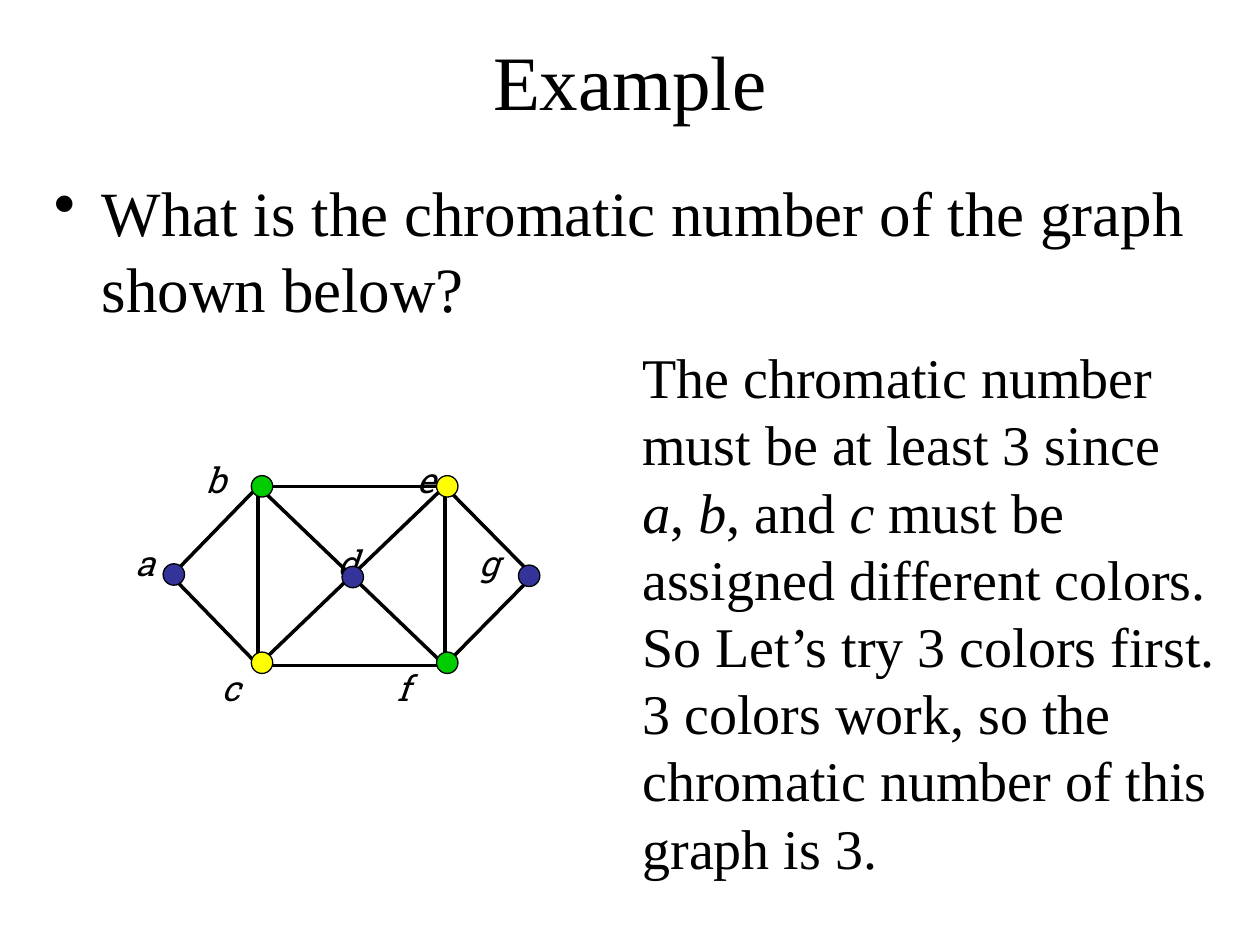
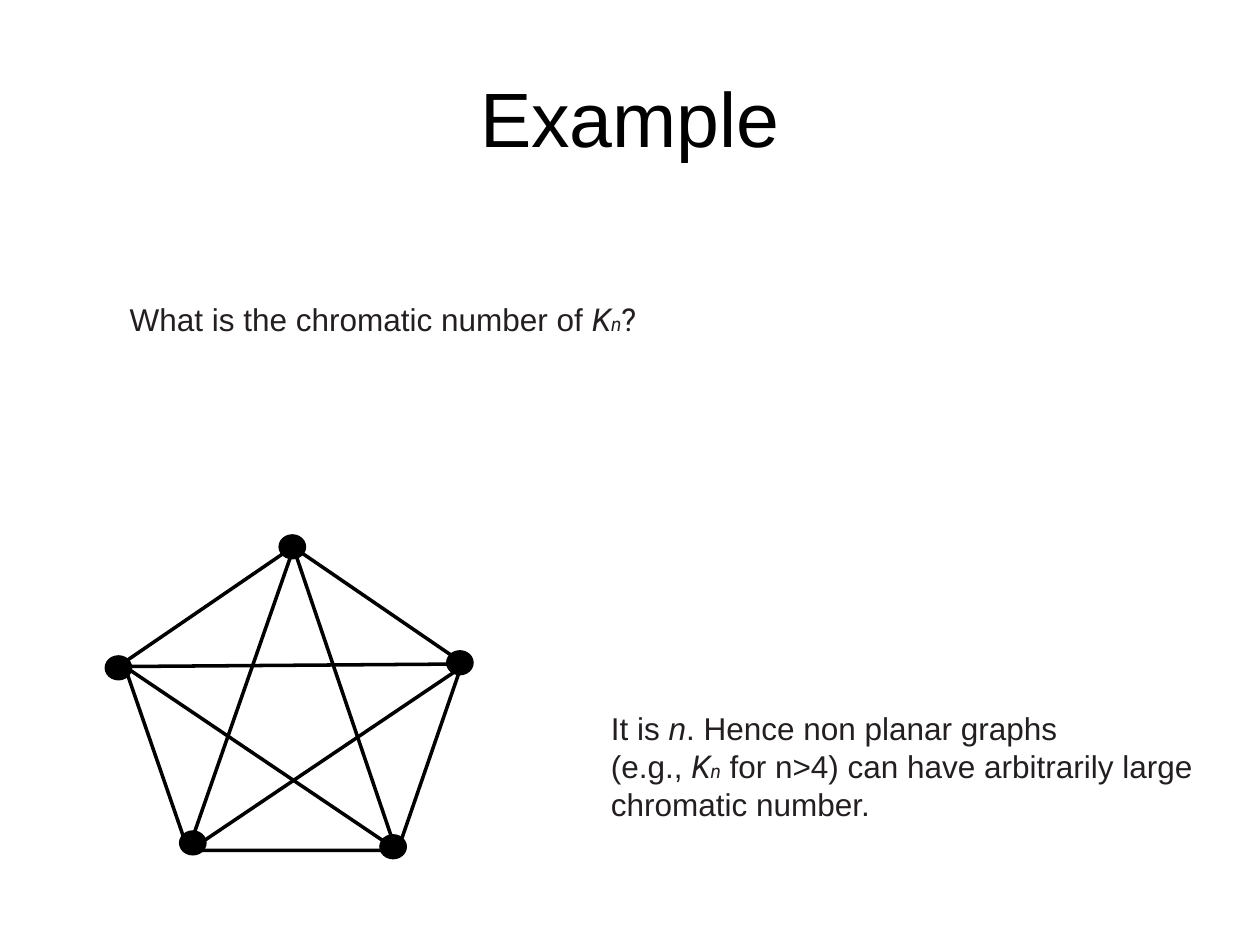
from itertools import combinations

from lxml import etree
from pptx import Presentation
from pptx import util as u
from pptx.dml.color import RGBColor
from pptx.enum import shapes, text
from pptx.oxml.ns import qn

COLORS = {
    "black": "000000", "ink": "231F20",
    "blue": "333399", "green": "00CC00", "yellow": "FFFF00",
}
SERIF, SANS, MATH, LABEL = "Times New Roman", "Arial", "Roboto", "Roboto Slab"

STYLES = {
    "serif title": dict(name=SERIF, size=44, color="black"),
    "sans title": dict(name=SANS, size=44, color="black"),
    "question": dict(name=SERIF, size=36, color="black"),
    "answer": dict(name=SERIF, size=32, color="black"),
    "answer vertex": dict(name=SERIF, size=32, color="black", italic=True),
    "label": dict(name=LABEL, size=20, color="black", italic=True),
    "plain": dict(name=SANS, size=18, color="ink"),
    "variable": dict(name=SANS, size=18, color="ink", italic=True),
    "symbol": dict(name=MATH, size=18, color="ink", italic=True),
    "index": dict(name=MATH, size=11, color="ink", italic=True),
    "mark": dict(name=MATH, size=18, color="ink"),
}

# Each text is a list of lines, each line a list of (words, style).
QUESTION = [[("What is the chromatic number of the graph shown below?", "question")]]
ANSWER = [[
    ("The chromatic number must be at least 3 since ", "answer"),
    ("a", "answer vertex"), (", ", "answer"),
    ("b", "answer vertex"), (", and ", "answer"),
    ("c", "answer vertex"),
    (" must be assigned different colors. So Let’s try 3 colors first. "
     "3 colors work, so the chromatic number of this graph is 3.", "answer"),
]]
KN = [("K", "symbol"), ("n", "index")]
KN_QUESTION = [[("What is the chromatic number of ", "plain"), *KN, ("?", "mark")]]
KN_ANSWER = [
    [("It is ", "plain"), ("n", "variable"), (". Hence non planar graphs", "plain")],
    [("(e.g., ", "plain"), *KN, (" for n>4) can have arbitrarily large", "plain")],
    [("chromatic number.", "plain")],
]

# Colored graph: where edges meet, where the dot sits, its color,
# and the label's centre and text row.
VERTICES = {
    "a": ((1.36, 4.57), (1.38, 4.56), "blue", 1.15, 2),
    "b": ((2.05, 3.86), (2.08, 3.86), "green", 1.71, 0),
    "c": ((2.05, 5.28), (2.08, 5.26), "yellow", 1.83, 5),
    "d": ((2.79, 4.57), (2.8, 4.58), "blue", 2.76, 2),
    "e": ((3.53, 3.86), (3.55, 3.86), "yellow", 3.38, 0),
    "f": ((3.53, 5.28), (3.55, 5.26), "green", 3.2, 5),
    "g": ((4.23, 4.57), (4.2, 4.57), "blue", 3.88, 2),
}
EDGES = ["be", "bc", "cf", "ef", "bd", "df", "cd", "de", "ab", "ac", "eg", "fg"]
LABEL_TOP, LABEL_PITCH, LABEL_SIZE = 3.64, 0.33, (0.3, 0.38)

PENTAGON = (0.98, 4.34, 2.69, 2.41)
K5_DOTS = [(2.32, 4.34), (3.65, 5.26), (3.12, 6.72), (1.53, 6.69), (0.94, 5.3)]
K5_CHORD_ENDS = [(2.33, 4.35), (3.7, 5.27), (3.14, 6.74), (1.49, 6.76), (0.99, 5.29)]


def rgb(color):
    return RGBColor.from_string(COLORS[color])


def place(shape, box):
    for side, length in zip(("left", "top", "width", "height"), box):
        setattr(shape, side, u.Inches(length))


def write(frame, lines, align=text.PP_ALIGN.LEFT):
    paragraph = frame.paragraphs[0]
    paragraph.alignment = align
    for number, line in enumerate(lines):
        if number:
            paragraph.add_line_break()
        for words, style in line:
            run = paragraph.add_run()
            run.text = words
            look = dict(STYLES[style])
            run.font.color.rgb = rgb(look.pop("color"))
            look["size"] = u.Pt(look["size"])
            for key, value in look.items():
                setattr(run.font, key, value)
    return paragraph


def add_text(slide, box, lines, align=text.PP_ALIGN.LEFT, wrap=True, inset=None):
    frame = slide.shapes.add_textbox(*map(u.Inches, box)).text_frame
    frame.word_wrap = wrap
    if inset is not None:
        for side in ("left", "top", "right", "bottom"):
            setattr(frame, "margin_" + side, u.Inches(inset))
    return write(frame, lines, align)


def add_bullet(paragraph, indent):
    props = paragraph._p.get_or_add_pPr()
    props.set("marL", str(u.Inches(indent)))
    props.set("indent", str(-u.Inches(indent)))
    before = etree.SubElement(props, qn("a:spcBef"))
    etree.SubElement(before, qn("a:spcPct")).set("val", "20000")
    etree.SubElement(props, qn("a:buChar")).set("char", "•")


def add_edge(slide, start, end):
    edge = slide.shapes.add_connector(
        shapes.MSO_CONNECTOR.STRAIGHT, *map(u.Inches, (*start, *end)))
    edge.line.color.rgb = rgb("black")
    edge.line.width = u.Pt(2)
    etree.SubElement(edge._element.spPr, qn("a:effectLst"))


def add_outlined(slide, kind, box, fill, weight):
    shape = slide.shapes.add_shape(kind, *map(u.Inches, box))
    shape.shadow.inherit = False
    if fill:
        shape.fill.solid()
        shape.fill.fore_color.rgb = rgb(fill)
    else:
        shape.fill.background()
    shape.line.color.rgb = rgb("black")
    shape.line.width = u.Pt(weight)


def add_dot(slide, center, size, fill):
    (x, y), (width, height) = center, size
    box = (x - width / 2, y - height / 2, width, height)
    add_outlined(slide, shapes.MSO_SHAPE.OVAL, box, fill, 0.75)


def add_example(prs, box, style):
    """Add a title-only slide headed Example."""
    slide = prs.slides.add_slide(prs.slide_layouts[5])
    title = slide.shapes.title
    place(title, box)
    title.text_frame.vertical_anchor = text.MSO_ANCHOR.MIDDLE
    write(title.text_frame, [[("Example", style)]], text.PP_ALIGN.CENTER)
    return slide


def build_colored_graph(prs):
    slide = add_example(prs, (0.5, 0.17, 9, 0.92), "serif title")
    add_text(slide, (5, 2.67, 4.75, 4.36), ANSWER)
    add_bullet(add_text(slide, (0.33, 1.33, 9.25, 1.67), QUESTION), 0.38)
    for start, end in EDGES:
        add_edge(slide, VERTICES[start][0], VERTICES[end][0])
    for name, (_, _, _, center, row) in VERTICES.items():
        box = (center - LABEL_SIZE[0] / 2, LABEL_TOP + row * LABEL_PITCH, *LABEL_SIZE)
        add_text(slide, box, [[(name, "label")]], text.PP_ALIGN.CENTER, inset=0)
    for _, center, color, _, _ in VERTICES.values():
        add_dot(slide, center, (0.17, 0.17), color)


def build_complete_graph(prs):
    slide = add_example(prs, (0.5, 0.3, 9, 1.25), "sans title")
    add_text(slide, (0.54, 2.33, 5, 0.71), KN_QUESTION, text.PP_ALIGN.CENTER)
    add_outlined(slide, shapes.MSO_SHAPE.REGULAR_PENTAGON, PENTAGON, None, 2)
    for first, second in combinations(range(5), 2):
        if second - first in (2, 3):
            add_edge(slide, K5_CHORD_ENDS[first], K5_CHORD_ENDS[second])
    for center in K5_DOTS:
        add_dot(slide, center, (0.21, 0.19), "black")
    add_text(slide, (4.75, 5.58, 4.95, 1.01), KN_ANSWER, wrap=False)


def main():
    prs = Presentation()
    prs.slide_width, prs.slide_height = u.Inches(10), u.Inches(7.5)
    build_colored_graph(prs)
    build_complete_graph(prs)
    prs.save("out.pptx")


if __name__ == "__main__":
    main()
